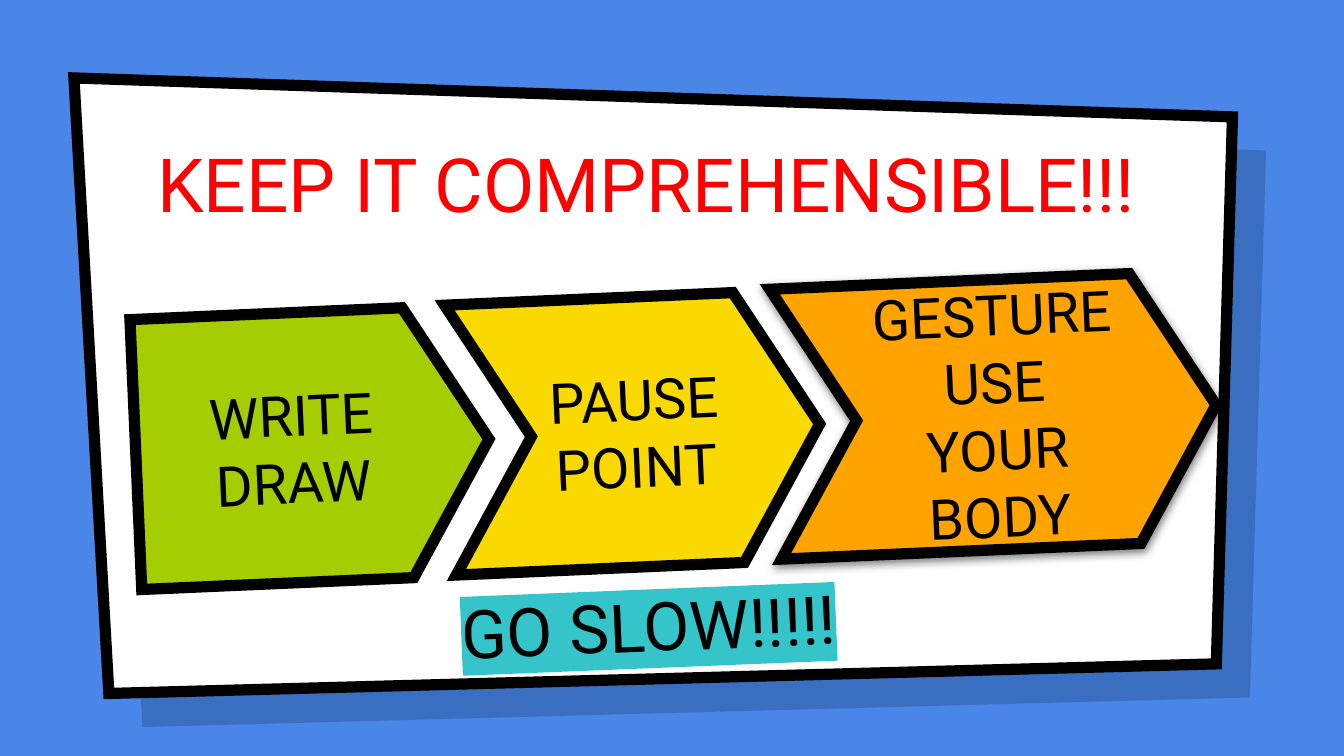
from dataclasses import dataclass

from lxml.etree import SubElement
from pptx import Presentation
from pptx.dml.color import RGBColor
from pptx.enum.shapes import MSO_SHAPE
from pptx.enum.text import MSO_ANCHOR, PP_ALIGN
from pptx.oxml.ns import qn
from pptx.util import Emu, Inches, Pt


@dataclass(frozen=True)
class Theme:
    font: str = "Roboto"
    blue: str = "4A86E8"
    navy: str = "001936"
    white: str = "FFFFFF"
    black: str = "000000"
    red: str = "FF0000"
    green: str = "A6CD02"
    yellow: str = "FAD900"
    orange: str = "FFA300"
    teal: str = "35C4CA"
    title: int = 40
    note: int = 36
    label: int = 30
    outline: int = 6


@dataclass(frozen=True)
class Box:
    """Place in grid cells: left, top, width, height."""
    x: float
    y: float
    w: float
    h: float

    def emu(self) -> tuple:
        return tuple(cells(v) for v in (self.x, self.y, self.w, self.h))


@dataclass(frozen=True)
class Arrow:
    lines: tuple
    preset: MSO_SHAPE
    box: Box
    color: str
    shadow: bool = False


THEME = Theme()
SLIDE_W, SLIDE_H = Inches(10), Inches(5.625)
CELL = SLIDE_W / 100  # square grid cell, 100 columns across
TILT = -2.5
PANEL = ((5.5, 5.8), (91.7, 8.7), (90.5, 49.4), (8.1, 51.6))
PANEL_OFFSET = 2.5

ARROWS = (
    Arrow(("WRITE", "DRAW"), MSO_SHAPE.PENTAGON,
          Box(10.1, 23.2, 26.3, 20.1), THEME.green),
    Arrow(("PAUSE POINT",), MSO_SHAPE.CHEVRON,
          Box(33.5, 22.1, 27.5, 20.1), THEME.yellow),
    Arrow(("GESTURE", "USE YOUR BODY"), MSO_SHAPE.CHEVRON,
          Box(57.7, 20.8, 32.8, 20.1), THEME.orange, shadow=True),
)


def cells(n: float) -> Emu:
    return Emu(round(n * CELL))


def rgb(color: str) -> RGBColor:
    return RGBColor.from_string(color)


def paint(sp, color: str, outlined: bool = True) -> None:
    sp.shadow.inherit = False
    sp.fill.solid()
    sp.fill.fore_color.rgb = rgb(color)
    if not outlined:
        sp.line.fill.background()
        return
    sp.line.color.rgb = rgb(THEME.black)
    sp.line.width = Pt(THEME.outline)
    SubElement(sp.line._get_or_add_ln(), qn("a:miter"), lim="800000")


def add_alpha(parent, percent: int) -> None:
    clr = parent.find(".//" + qn("a:srgbClr"))
    SubElement(clr, qn("a:alpha"), val=str(percent * 1000))


def add_shadow(sp) -> None:
    effects = sp._element.spPr.find(qn("a:effectLst"))
    outer = SubElement(effects, qn("a:outerShdw"), blurRad=str(Pt(4.5)),
                       dist=str(Pt(1.5)), dir="5400000", algn="bl",
                       rotWithShape="0")
    SubElement(outer, qn("a:srgbClr"), val=THEME.black)
    add_alpha(outer, 50)


def write(sp, lines: tuple, size: int, color: str,
          align: PP_ALIGN, anchor: MSO_ANCHOR) -> None:
    tf = sp.text_frame
    tf.word_wrap = True
    tf.vertical_anchor = anchor
    tf.margin_left = tf.margin_right = Inches(0.1)
    tf.margin_top = tf.margin_bottom = Inches(0.1)
    for i, line in enumerate(lines):
        p = tf.add_paragraph() if i else tf.paragraphs[0]
        p.text = line
        p.alignment = align
        p.font.name = THEME.font
        p.font.size = Pt(size)
        p.font.color.rgb = rgb(color)


def highlight(r, color: str) -> None:
    mark = SubElement(r._r.get_or_add_rPr(), qn("a:highlight"))
    SubElement(mark, qn("a:srgbClr"), val=color)


def draw_panel(s, offset: float, color: str, outlined: bool):
    points = [(cells(x + offset), cells(y + offset)) for x, y in PANEL]
    builder = s.shapes.build_freeform(*points[0])
    builder.add_line_segments(points[1:], close=True)
    sp = builder.convert_to_shape()
    paint(sp, color, outlined)
    return sp


def draw_arrow(s, arrow: Arrow) -> None:
    sp = s.shapes.add_shape(arrow.preset, *arrow.box.emu())
    sp.adjustments[0] = 0.3
    sp.rotation = TILT
    paint(sp, arrow.color)
    if arrow.shadow:
        add_shadow(sp)
    write(sp, arrow.lines, THEME.label, THEME.black,
          PP_ALIGN.CENTER, MSO_ANCHOR.MIDDLE)


def draw_text(s, box: Box, text: str, size: int, color: str, align: PP_ALIGN):
    sp = s.shapes.add_textbox(*box.emu())
    write(sp, (text,), size, color, align, MSO_ANCHOR.BOTTOM)
    return sp


def main() -> None:
    prs = Presentation()
    prs.slide_width, prs.slide_height = SLIDE_W, SLIDE_H
    s = prs.slides.add_slide(prs.slide_layouts[6])
    s.background.fill.solid()
    s.background.fill.fore_color.rgb = rgb(THEME.blue)

    # Skewed panel over its flat shade
    shade = draw_panel(s, PANEL_OFFSET, THEME.navy, outlined=False)
    add_alpha(shade._element.spPr, 22)
    draw_panel(s, 0, THEME.white, outlined=True)

    # Title
    draw_text(s, Box(10.7, 9.6, 76.9, 8.3), "KEEP IT COMPREHENSIBLE!!!",
              THEME.title, THEME.red, PP_ALIGN.LEFT)

    # Row of tilted arrows
    for arrow in ARROWS:
        draw_arrow(s, arrow)

    # Highlighted reminder
    note = draw_text(s, Box(9.8, 42.2, 76.9, 8.3), "GO SLOW!!!!!",
                     THEME.note, THEME.black, PP_ALIGN.CENTER)
    note.rotation = -2.3
    highlight(note.text_frame.paragraphs[0].runs[0], THEME.teal)

    prs.save("out.pptx")


if __name__ == "__main__":
    main()
